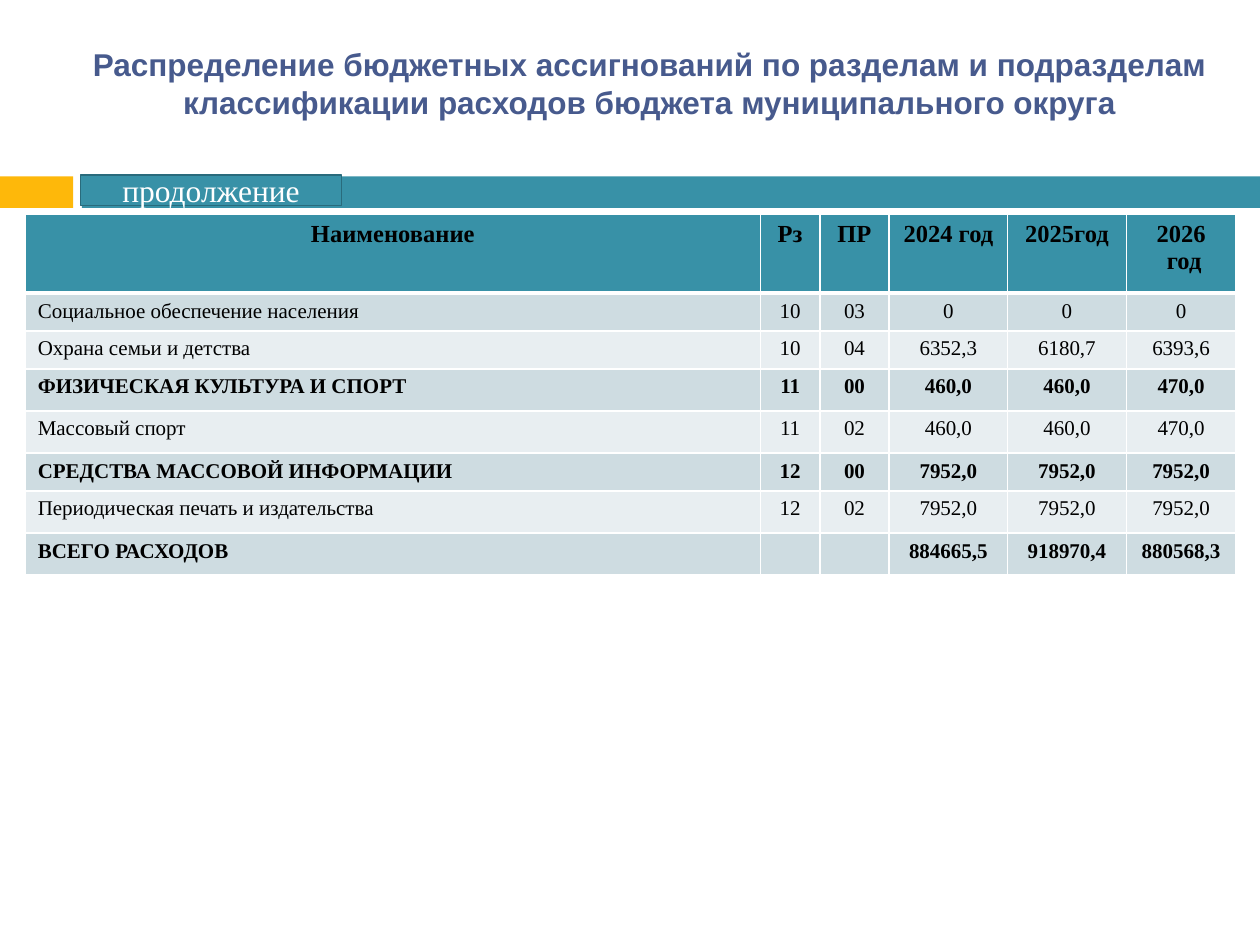
from dataclasses import dataclass

from lxml import etree
from pptx import Presentation
from pptx import util as u
from pptx.dml.color import RGBColor
from pptx.enum import shapes, text
from pptx.oxml import ns


@dataclass(frozen=True)
class Theme:
    """Colours, fonts and type sizes of the slide."""
    teal: str = "3891A7"
    teal_dark: str = "296B7C"
    amber: str = "FEB80A"
    title: str = "475A8D"
    ink: str = "000000"
    white: str = "FFFFFF"
    bands: tuple = ("CEDCE1", "E8EEF1")
    sans: str = "Arial"
    serif: str = "Times New Roman"
    large: int = 18
    header: int = 14
    body: int = 12


THEME = Theme()
WIDTH, HEIGHT = u.Inches(10), u.Inches(7.5)
TITLE = ("Распределение бюджетных ассигнований по разделам и подразделам "
         "классификации расходов бюджета муниципального округа")
HEADER = ("Наименование", "Рз", "ПР", "2024 год", "2025год", "2026\n год")
ROWS = (
    ("Социальное обеспечение населения", "10", "03", "0", "0", "0"),
    ("Охрана семьи и детства", "10", "04", "6352,3", "6180,7", "6393,6"),
    ("ФИЗИЧЕСКАЯ КУЛЬТУРА И СПОРТ", "11", "00", "460,0", "460,0", "470,0"),
    ("Массовый спорт", "11", "02", "460,0", "460,0", "470,0"),
    ("СРЕДСТВА МАССОВОЙ ИНФОРМАЦИИ", "12", "00", "7952,0", "7952,0", "7952,0"),
    ("Периодическая печать и издательства", "12", "02", "7952,0", "7952,0", "7952,0"),
    ("ВСЕГО РАСХОДОВ", "", "", "884665,5", "918970,4", "880568,3"),
)
COLUMN_WIDTHS = (5.83, 0.47, 0.55, 0.94, 0.94, 0.87)
ROW_HEIGHTS = (0.58, 0.21, 0.22, 0.31, 0.31, 0.27, 0.31, 0.31)


def share(left, top, width, height):
    """Turn percentages of the slide's size into a box."""
    return tuple(round(part * whole / 100) for part, whole in
                 zip((left, top, width, height), (WIDTH, HEIGHT) * 2))


def apply(target, formats):
    """Set each attribute of the target from a dict of values."""
    for name, value in formats.items():
        setattr(target, name, value)


def write(frame, words, color, align=text.PP_ALIGN.CENTER, **font):
    """Write one paragraph per line of words in a single style."""
    frame.text = words
    for paragraph in frame.paragraphs:
        paragraph.alignment = align
        for run in paragraph.runs:
            apply(run.font, font)
            run.font.color.rgb = RGBColor.from_string(color)
        if not paragraph.runs:
            end = etree.SubElement(paragraph._p, ns.qn("a:endParaRPr"))
            end.set("sz", str(font["size"].centipoints))


def add_bar(slide, box, fill, line=None):
    """Add a flat rectangle, outlined only when a line colour is given."""
    shape = slide.shapes.add_shape(shapes.MSO_SHAPE.RECTANGLE, *box)
    shape.shadow.inherit = False
    shape.fill.solid()
    shape.fill.fore_color.rgb = RGBColor.from_string(fill)
    if line:
        shape.line.color.rgb = RGBColor.from_string(line)
        shape.line.width = u.Pt(0)
    else:
        shape.line.fill.background()
    return shape


def add_title(slide, box):
    """Add the centred slide title."""
    frame = slide.shapes.add_textbox(*box).text_frame
    apply(frame, {"word_wrap": True, "vertical_anchor": text.MSO_ANCHOR.MIDDLE})
    write(frame, TITLE, THEME.title, name=THEME.sans, size=u.Pt(THEME.large), bold=True)


def add_band(slide, box):
    """Add the amber and teal band across the box."""
    left, top, width, height = box
    amber, start = round(width * 0.058), round(width * 0.065)
    add_bar(slide, (left, top, amber, height), THEME.amber)
    add_bar(slide, (left + start, top, width - start, height), THEME.teal)


def add_label(slide, box):
    """Add the continuation label."""
    frame = add_bar(slide, box, THEME.teal, THEME.teal_dark).text_frame
    apply(frame, {"word_wrap": True, "vertical_anchor": text.MSO_ANCHOR.MIDDLE})
    write(frame, "продолжение", THEME.white, name=THEME.serif, size=u.Pt(THEME.large))


def add_borders(cell, bottom):
    """Draw white cell borders with the given bottom width in points."""
    properties = cell._tc.get_or_add_tcPr()
    widths = {"lnL": 1, "lnR": 1, "lnT": 1, "lnB": bottom}
    for index, (tag, points) in enumerate(widths.items()):
        line = etree.Element(ns.qn(f"a:{tag}"), w=str(u.Pt(points)))
        fill = etree.SubElement(line, ns.qn("a:solidFill"))
        etree.SubElement(fill, ns.qn("a:srgbClr"), val=THEME.white)
        properties.insert(index, line)


def add_budget_table(slide, box):
    """Add the expenditure table, sharing the box among columns and rows."""
    left, top, width, height = box
    table = slide.shapes.add_table(len(ROWS) + 1, len(HEADER), *box).table
    for column, part in zip(table.columns, COLUMN_WIDTHS):
        column.width = round(width * part / sum(COLUMN_WIDTHS))
    for row, part in zip(table.rows, ROW_HEIGHTS):
        row.height = round(height * part / sum(ROW_HEIGHTS))
    for r, values in enumerate((HEADER, *ROWS)):
        heading = r == 0
        fill = THEME.teal if heading else THEME.bands[(r - 1) % 2]
        font = {"name": THEME.serif, "bold": heading or values[0].isupper(),
                "size": u.Pt(THEME.header if heading else THEME.body)}
        for c, value in enumerate(values):
            cell = table.cell(r, c)
            cell.fill.solid()
            cell.fill.fore_color.rgb = RGBColor.from_string(fill)
            add_borders(cell, 3 if heading else 1)
            centred = heading or c > 0
            align = text.PP_ALIGN.CENTER if centred else text.PP_ALIGN.LEFT
            write(cell.text_frame, value, THEME.ink, align, **font)


def main():
    """Build and save the slide."""
    presentation = Presentation()
    apply(presentation, {"slide_width": WIDTH, "slide_height": HEIGHT})
    slide = presentation.slides.add_slide(presentation.slide_layouts[6])
    add_band(slide, share(0, 18.67, 100, 3.33))
    add_title(slide, share(4.3, 3.33, 94.5, 10.93))
    add_budget_table(slide, share(2, 22.67, 96.1, 36.27))
    add_label(slide, share(6.4, 18.53, 20.7, 3.2))
    presentation.save("out.pptx")


if __name__ == "__main__":
    main()
